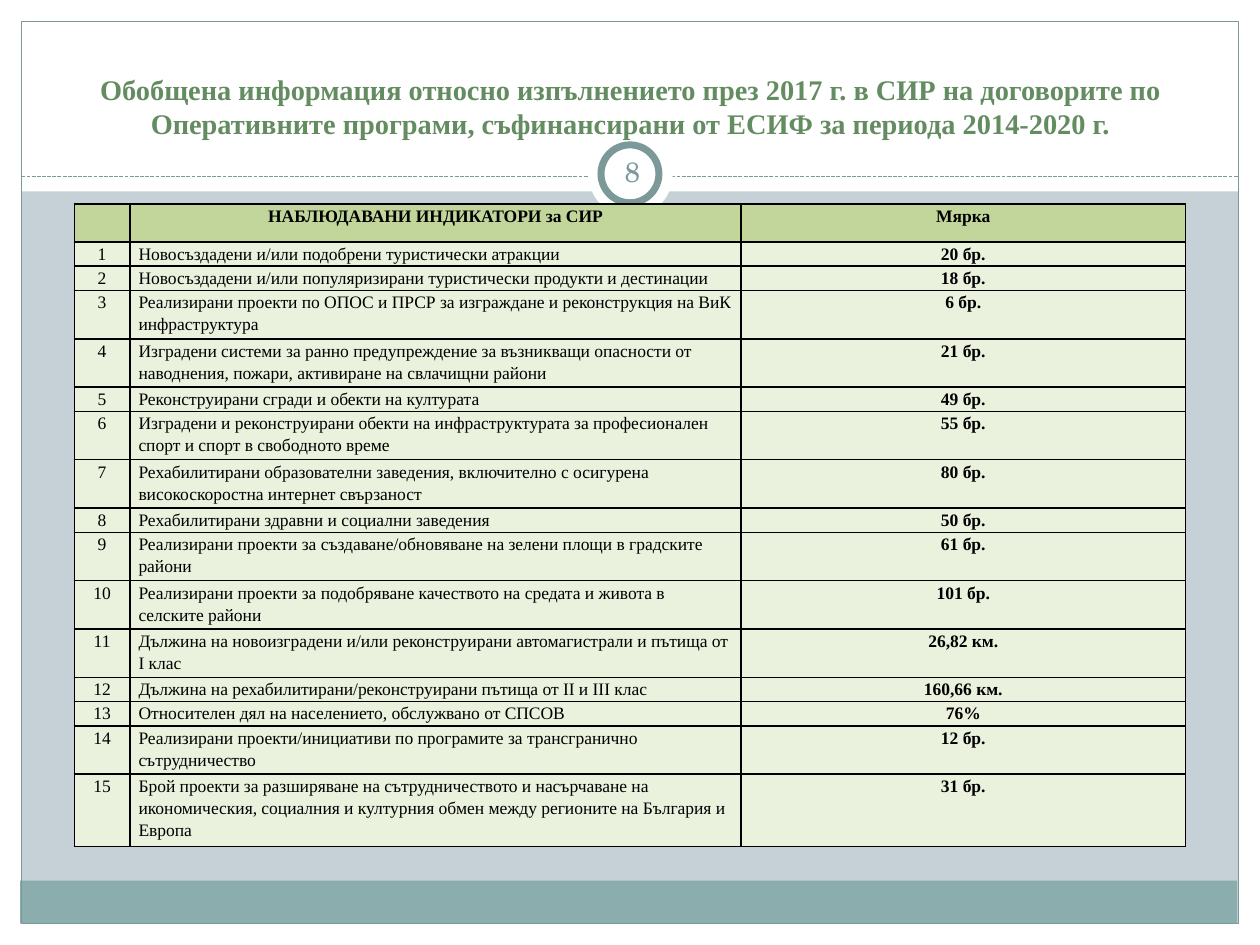
from dataclasses import dataclass
from typing import Optional

from lxml.etree import SubElement
from pptx import Presentation
from pptx.dml.color import RGBColor
from pptx.enum.dml import MSO_LINE
from pptx.enum.shapes import MSO_CONNECTOR, MSO_SHAPE
from pptx.enum.text import MSO_ANCHOR, PP_ALIGN
from pptx.oxml.ns import qn
from pptx.util import Inches, Pt

COLORS = {
    "background": "C5D1D7",
    "white": "FFFFFF",
    "footer": "8CADAE",
    "frame": "7C999A",
    "title": "648C61",
    "black": "000000",
    "header": "C2D69B",
    "body": "EAF1DD",
}
SERIF = "Times New Roman"
TITLE = (
    "Обобщена информация относно изпълнението през 2017 г. в СИР на договорите по "
    "Оперативните програми, съфинансирани от ЕСИФ за периода 2014-2020 г."
)
COLUMN_WIDTHS = (0.44, 4.85, 3.53)
HEADER_HEIGHT = 0.26
LINE_HEIGHT = 0.19


@dataclass(frozen=True)
class Panel:
    left: float
    top: float
    width: float
    height: float
    fill: Optional[str] = None
    line: Optional[str] = None
    line_width: float = 0.75
    kind: MSO_SHAPE = MSO_SHAPE.RECTANGLE


@dataclass(frozen=True)
class Indicator:
    name: str
    measure: str
    lines: int = 1


PANELS = (
    Panel(0, 7.33, 10, 0.17, "white"),
    Panel(0, 0, 10, 1.52, "white"),
    Panel(0, 0, 0.17, 7.5, "white"),
    Panel(9.83, 0, 0.17, 7.5, "white"),
    Panel(0.16, 6.99, 9.66, 0.34, "footer"),
    Panel(0.17, 0.17, 9.66, 7.16, line="frame"),
)
BADGE = (
    Panel(4.67, 1.05, 0.67, 0.67, "white", kind=MSO_SHAPE.OVAL),
    Panel(4.77, 1.15, 0.46, 0.46, "white", "frame", 4, MSO_SHAPE.OVAL),
)
INDICATORS = (
    Indicator("Новосъздадени и/или подобрени туристически атракции", "20 бр."),
    Indicator("Новосъздадени и/или популяризирани туристически продукти и дестинации", "18 бр."),
    Indicator("Реализирани проекти по ОПОС и ПРСР за изграждане и реконструкция на ВиК инфраструктура", "6 бр.", 2),
    Indicator("Изградени системи за ранно предупреждение за възникващи опасности от наводнения, пожари, "
              "активиране на свлачищни райони", "21 бр.", 2),
    Indicator("Реконструирани сгради и обекти на културата", "49 бр."),
    Indicator("Изградени и реконструирани обекти на инфраструктурата за професионален спорт и спорт "
              "в свободното време", "55 бр.", 2),
    Indicator("Рехабилитирани образователни заведения, включително с осигурена високоскоростна "
              "интернет свързаност", "80 бр.", 2),
    Indicator("Рехабилитирани здравни и социални заведения", "50 бр."),
    Indicator("Реализирани проекти за създаване/обновяване на зелени площи в градските райони", "61 бр.", 2),
    Indicator("Реализирани проекти за подобряване качеството на средата и живота в селските райони", "101 бр.", 2),
    Indicator("Дължина на новоизградени и/или реконструирани автомагистрали и пътища от I клас", "26,82 км.", 2),
    Indicator("Дължина на рехабилитирани/реконструирани пътища от II и III клас", "160,66 км."),
    Indicator("Относителен дял на населението, обслужвано от СПСОВ", "76%"),
    Indicator("Реализирани проекти/инициативи по програмите за трансгранично сътрудничество", "12 бр.", 2),
    Indicator("Брой проекти за разширяване на сътрудничеството и насърчаване на икономическия, социалния и "
              "културния обмен между регионите на България и Европа", "31 бр.", 3),
)


def rgb(name: str) -> RGBColor:
    return RGBColor.from_string(COLORS[name])


def write_text(frame, text: str, *, size: float, color: str = "black", font: str = SERIF,
               bold: bool = False, align: PP_ALIGN = PP_ALIGN.CENTER, spacing: float = 1.0) -> None:
    frame.word_wrap = True
    paragraph = frame.paragraphs[0]
    paragraph.alignment = align
    paragraph.line_spacing = spacing
    paragraph.font.size = Pt(size)
    run = paragraph.add_run()
    run.text = text
    run.font.name = font
    run.font.size = Pt(size)
    run.font.bold = bold
    run.font.color.rgb = rgb(color)


def add_panel(slide, panel: Panel) -> None:
    shape = slide.shapes.add_shape(
        panel.kind, Inches(panel.left), Inches(panel.top), Inches(panel.width), Inches(panel.height))
    shape.shadow.inherit = False
    if panel.fill:
        shape.fill.solid()
        shape.fill.fore_color.rgb = rgb(panel.fill)
    else:
        shape.fill.background()
    if panel.line:
        shape.line.color.rgb = rgb(panel.line)
        shape.line.width = Pt(panel.line_width)
    else:
        shape.line.fill.background()


def add_divider(slide) -> None:
    line = slide.shapes.add_connector(
        MSO_CONNECTOR.STRAIGHT, Inches(0.17), Inches(1.4), Inches(9.83), Inches(1.4))
    line.line.color.rgb = rgb("frame")
    line.line.width = Pt(0.75)
    line.line.dash_style = MSO_LINE.SQUARE_DOT
    SubElement(line._element.spPr, qn("a:effectLst"))


def add_text_box(slide, left: float, top: float, width: float, height: float,
                 anchor: MSO_ANCHOR, inset: float, bottom: float):
    frame = slide.shapes.add_textbox(Inches(left), Inches(top), Inches(width), Inches(height)).text_frame
    frame.vertical_anchor = anchor
    frame.margin_left = frame.margin_right = frame.margin_top = Inches(inset)
    frame.margin_bottom = Inches(bottom)
    return frame


def fill_cell(cell, text: str, fill: str, bold: bool, align: PP_ALIGN) -> None:
    cell.margin_left = cell.margin_right = Inches(0.07)
    cell.margin_top = cell.margin_bottom = 0
    properties = cell._tc.get_or_add_tcPr()
    for side in ("L", "R", "T", "B"):
        border = SubElement(properties, qn(f"a:ln{side}"), w=str(Pt(1)))
        SubElement(SubElement(border, qn("a:solidFill")), qn("a:srgbClr"), val=COLORS["black"])
    cell.fill.solid()
    cell.fill.fore_color.rgb = rgb(fill)
    write_text(cell.text_frame, text, size=10, bold=bold, align=align, spacing=1.15)


def add_indicator_table(slide) -> None:
    heights = [HEADER_HEIGHT] + [LINE_HEIGHT * indicator.lines for indicator in INDICATORS]
    table = slide.shapes.add_table(
        len(heights), len(COLUMN_WIDTHS), Inches(0.59), Inches(1.62),
        Inches(sum(COLUMN_WIDTHS)), Inches(sum(heights))).table
    for column, width in zip(table.columns, COLUMN_WIDTHS):
        column.width = Inches(width)
    for row, height in zip(table.rows, heights):
        row.height = Inches(height)
    for column, heading in enumerate(("", "НАБЛЮДАВАНИ ИНДИКАТОРИ за СИР", "Мярка")):
        fill_cell(table.cell(0, column), heading, "header", True, PP_ALIGN.CENTER)
    for number, indicator in enumerate(INDICATORS, start=1):
        fill_cell(table.cell(number, 0), str(number), "body", False, PP_ALIGN.CENTER)
        fill_cell(table.cell(number, 1), indicator.name, "body", False, PP_ALIGN.LEFT)
        fill_cell(table.cell(number, 2), indicator.measure, "body", True, PP_ALIGN.CENTER)


def main() -> None:
    """Build the slide of indicators observed in the region."""
    presentation = Presentation()
    presentation.slide_width = Inches(10)
    presentation.slide_height = Inches(7.5)
    slide = presentation.slides.add_slide(presentation.slide_layouts[6])
    slide.background.fill.solid()
    slide.background.fill.fore_color.rgb = rgb("background")
    for panel in PANELS:
        add_panel(slide, panel)
    add_divider(slide)
    for panel in BADGE:
        add_panel(slide, panel)
    title = add_text_box(slide, 0.5, 0.3, 9, 1.14, MSO_ANCHOR.BOTTOM, 0.1, 0.33)
    write_text(title, TITLE, size=16.2, color="title", bold=True)
    page_number = add_text_box(slide, 4.77, 1.12, 0.5, 0.48, MSO_ANCHOR.MIDDLE, 0.05, 0.05)
    write_text(page_number, "8", size=16, color="frame", font="TeX Gyre Schola")
    add_indicator_table(slide)
    presentation.save("out.pptx")


if __name__ == "__main__":
    main()
